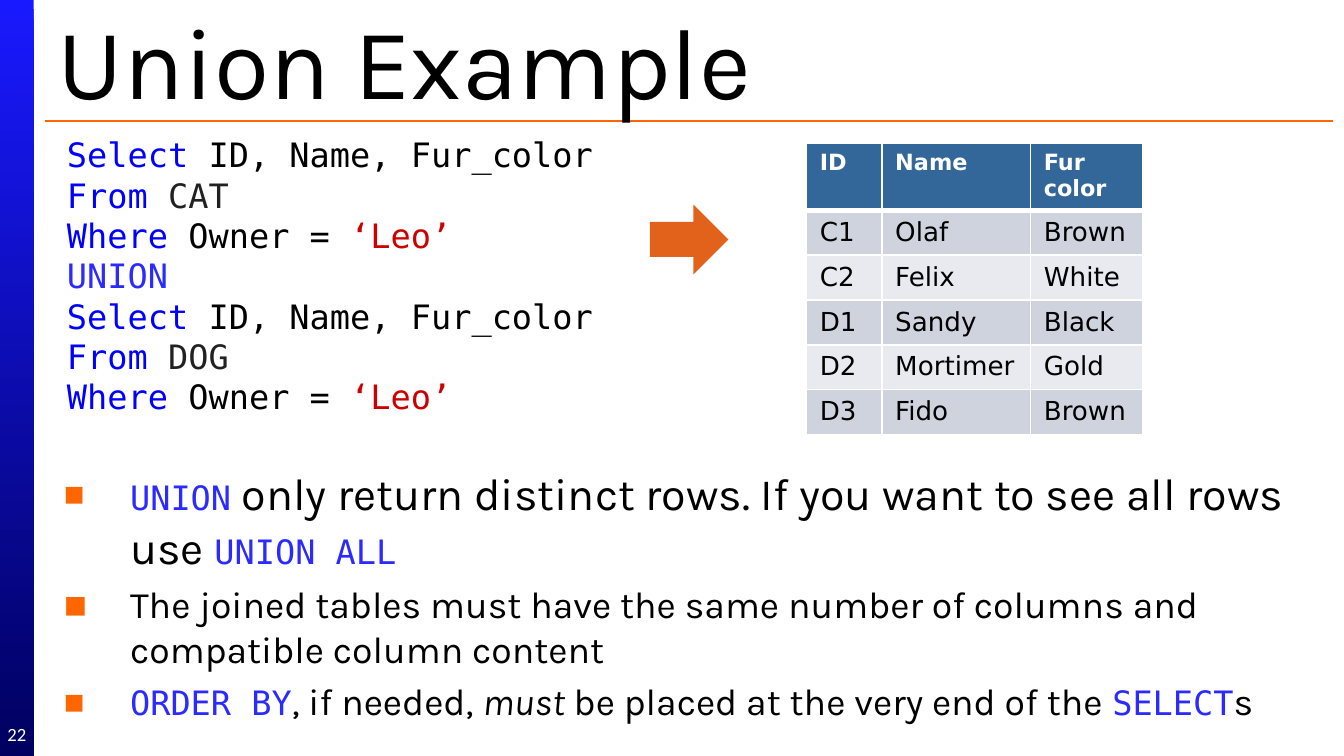
from dataclasses import dataclass
from typing import NamedTuple

from lxml import etree
from pptx import Presentation
from pptx.dml.color import RGBColor
from pptx.enum.shapes import MSO_CONNECTOR as Connector, MSO_SHAPE as Preset
from pptx.enum.text import MSO_ANCHOR as Anchor, MSO_AUTO_SIZE as AutoSize, PP_ALIGN as Align
from pptx.oxml import parse_xml
from pptx.oxml.ns import nsdecls, qn
from pptx.util import Pt

# Colours
BLACK = RGBColor(0x00, 0x00, 0x00)
WHITE = RGBColor(0xFF, 0xFF, 0xFF)
BAR_TOP = RGBColor(0x19, 0x19, 0xFF)
BAR_BOTTOM = RGBColor(0x00, 0x00, 0x60)
ORANGE = RGBColor(0xFF, 0x66, 0x00)
ARROW_ORANGE = RGBColor(0xE3, 0x62, 0x1B)
KEYWORD_BLUE = RGBColor(0x00, 0x00, 0xFF)
TERM_BLUE = RGBColor(0x2B, 0x2B, 0xFF)
TABLE_NAME = RGBColor(0x21, 0x21, 0x21)
STRING_RED = RGBColor(0xCC, 0x00, 0x00)
HEADER_BLUE = RGBColor(0x33, 0x66, 0x99)
ROW_SHADES = RGBColor(0xCE, 0xD3, 0xDE), RGBColor(0xE8, 0xEA, 0xEF)

# Fonts
SANS, MONO, GRID, NUMBER = "Karla", "DejaVu Sans Mono", "DejaVu Sans", "Calibri"


class Box(NamedTuple):
    left: float
    top: float
    width: float
    height: float

    def emu(self) -> list:
        return [Pt(length) for length in self]


@dataclass(frozen=True)
class Span:
    text: str
    color: RGBColor = BLACK
    size: float = 18
    font: str = MONO
    italic: bool = False


@dataclass(frozen=True)
class Point:
    spans: tuple
    space_before: float


def write(paragraph, text: str, *, size: float, font: str, color: RGBColor,
          bold: bool = False, italic: bool = False) -> None:
    run = paragraph.add_run()
    run.text = text
    run.font.size, run.font.name = Pt(size), font
    run.font.bold, run.font.italic = bold, italic
    run.font.color.rgb = color


def write_spans(paragraph, spans: tuple) -> None:
    for span in spans:
        write(paragraph, span.text, size=span.size, font=span.font,
              color=span.color, italic=span.italic)


def add_frame(shapes, box: Box, anchor=Anchor.TOP):
    frame = shapes.add_textbox(*box.emu()).text_frame
    frame.word_wrap, frame.vertical_anchor = True, anchor
    frame.auto_size = AutoSize.NONE
    return frame


def paragraphs(frame, count: int) -> list:
    return [frame.paragraphs[0]] + [frame.add_paragraph() for _ in range(count - 1)]


def add_plain_shape(shapes, preset, box: Box):
    shape = shapes.add_shape(preset, *box.emu())
    shape.shadow.inherit = False
    shape.line.fill.background()
    return shape


def set_bullet(paragraph, indent: float) -> None:
    properties = paragraph._p.get_or_add_pPr()
    properties.set("marL", str(Pt(indent)))
    properties.set("indent", str(-Pt(indent)))
    color = etree.SubElement(properties, qn("a:buClr"))
    etree.SubElement(color, qn("a:srgbClr"), val=str(ORANGE))
    etree.SubElement(properties, qn("a:buFont"), typeface=GRID)
    etree.SubElement(properties, qn("a:buChar"), char="▪")


def set_borders(cell, header: bool) -> None:
    properties = cell._tc.get_or_add_tcPr()
    for side in "LRTB":
        width = Pt(3 if header and side == "B" else 1)
        properties.append(parse_xml(
            f'<a:ln{side} {nsdecls("a")} w="{width}"><a:solidFill>'
            f'<a:srgbClr val="{WHITE}"/></a:solidFill></a:ln{side}>'))


def add_result_table(shapes, box: Box, rows: list, widths: tuple,
                     header_height: float, row_height: float) -> None:
    holder = shapes.add_table(len(rows), len(widths), *box.emu())
    table = holder.table
    for column, width in zip(table.columns, widths):
        column.width = Pt(width)
    for index, values in enumerate(rows):
        header = index == 0
        table.rows[index].height = Pt(header_height if header else row_height)
        for cell, value in zip(table.rows[index].cells, values):
            set_borders(cell, header)
            cell.fill.solid()
            cell.fill.fore_color.rgb = HEADER_BLUE if header else ROW_SHADES[(index - 1) % 2]
            write(cell.text_frame.paragraphs[0], value, size=12 if header else 14,
                  font=GRID, color=WHITE if header else BLACK, bold=header)
    holder.height = Pt(box.height)


def query(table_name: str) -> list:
    return [
        (Span("Select ", KEYWORD_BLUE), Span("ID, Name, Fur_color")),
        (Span("From", KEYWORD_BLUE), Span(f" {table_name}", TABLE_NAME)),
        (Span("Where ", KEYWORD_BLUE), Span("Owner = "), Span("‘Leo’", STRING_RED)),
    ]


def term(text: str) -> Span:
    return Span(text, TERM_BLUE)


def prose(text: str, size: float = 20, italic: bool = False) -> Span:
    return Span(text, size=size, font=SANS, italic=italic)


CODE_LINES = query("CAT") + [(term("UNION"),)] + query("DOG")

POINTS = [
    Point((term("UNION"),
           prose(" only return distinct rows. If you want to see all rows use ", 24),
           term("UNION ALL")), 4.8),
    Point((prose("The joined tables must have the same number of columns and "
                 "compatible column content"),), 4),
    Point((term("ORDER BY"), prose(", if needed, "), prose("must", italic=True),
           prose(" be placed at the very end of the "), term("SELECT"), prose("s")), 4),
]

RESULT_ROWS = [
    ("ID", "Name", "Fur color"),
    ("C1", "Olaf", "Brown"),
    ("C2", "Felix", "White"),
    ("D1", "Sandy", "Black"),
    ("D2", "Mortimer", "Gold"),
    ("D3", "Fido", "Brown"),
]


def main() -> None:
    deck = Presentation()
    deck.slide_width, deck.slide_height = Pt(720), Pt(405)
    shapes = deck.slides.add_slide(deck.slide_layouts[6]).shapes

    # Side bar
    bar = add_plain_shape(shapes, Preset.RECTANGLE, Box(0, 0, 18, 405))
    bar.fill.gradient()
    bar.fill.gradient_angle = 270
    for stop, color in zip(bar.fill.gradient_stops, (BAR_TOP, BAR_BOTTOM)):
        stop.color.rgb = color

    # Title and rule
    rule = shapes.add_connector(Connector.STRAIGHT, Pt(24), Pt(64.8), Pt(714), Pt(64.8))
    rule.line.color.rgb, rule.line.width = ORANGE, Pt(0.75)
    etree.SubElement(rule._element.spPr, qn("a:effectLst"))
    title = add_frame(shapes, Box(24, 4.5, 690, 54), Anchor.MIDDLE)
    write(title.paragraphs[0], "Union Example", size=54, font=SANS, color=BLACK)

    # Rules of UNION
    notes = add_frame(shapes, Box(26.6, 246.2, 672, 157))
    for paragraph, point in zip(paragraphs(notes, len(POINTS)), POINTS):
        paragraph.space_before = Pt(point.space_before)
        set_bullet(paragraph, 36)
        write_spans(paragraph, point.spans)

    # Slide number
    number = add_frame(shapes, Box(0, 382.5, 18, 21.5), Anchor.MIDDLE)
    number.margin_left = number.margin_right = number.margin_top = number.margin_bottom = 0
    number.paragraphs[0].alignment = Align.CENTER
    write(number.paragraphs[0], "22", size=10, font=NUMBER, color=WHITE)

    # Query, its result and the arrow between them
    code = add_frame(shapes, Box(28.8, 68.4, 300, 160))
    code.auto_size = AutoSize.SHAPE_TO_FIT_TEXT
    for paragraph, spans in zip(paragraphs(code, len(CODE_LINES)), CODE_LINES):
        write_spans(paragraph, spans)
    add_result_table(shapes, Box(432, 76.6, 180, 142), RESULT_ROWS,
                     widths=(40.4, 79.6, 60), header_height=16, row_height=22.3)
    arrow = add_plain_shape(shapes, Preset.RIGHT_ARROW, Box(348.2, 109.6, 42, 37.4))
    arrow.fill.solid()
    arrow.fill.fore_color.rgb = ARROW_ORANGE

    deck.save("out.pptx")


if __name__ == "__main__":
    main()
